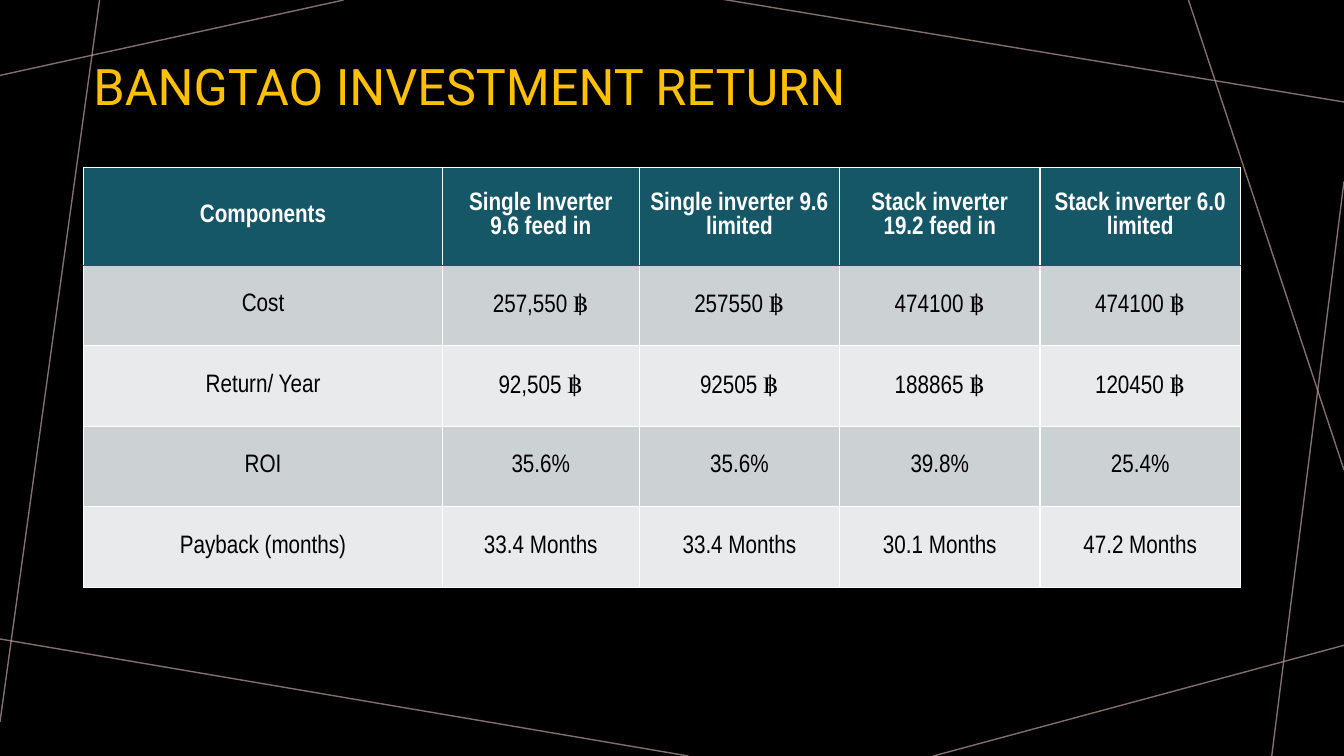
from lxml import etree
from pptx import Presentation
from pptx.dml.color import RGBColor
from pptx.enum import shapes, text
from pptx.oxml import ns
from pptx.util import Cm, Pt

# Content
TITLE = "BANGTAO INVESTMENT RETURN"
ROWS = [
    ("Components", "Single Inverter 9.6 feed in", "Single inverter 9.6 limited",
     "Stack inverter 19.2 feed in", "Stack inverter 6.0 limited"),
    ("Cost", "257,550 ฿", "257550 ฿", "474100 ฿", "474100 ฿"),
    ("Return/ Year", "92,505 ฿", "92505 ฿", "188865 ฿", "120450 ฿"),
    ("ROI", "35.6%", "35.6%", "39.8%", "25.4%"),
    ("Payback (months)", "33.4 Months", "33.4 Months", "30.1 Months", "47.2 Months"),
]

# Measures in cm
WIDTH, HEIGHT = 33.87, 19.05
COLUMNS = [9.04, 4.96, 5.05, 5.05, 5.05]
HEADER_HEIGHT, ROW_HEIGHT = 2.46, 2.03
TABLE_LEFT, TABLE_TOP = 2.11, 4.22
LINES = [
    (8.66, 0, 0, 1.9), (2.51, 0, 0, 18.19), (17.35, HEIGHT, -0.13, 16.08),
    (WIDTH, 16.26, 23.52, HEIGHT), (WIDTH, 4.57, 32.05, HEIGHT),
    (WIDTH, 11.84, 29.95, 0), (WIDTH, 2.57, 18.14, -0.03),
]

BLACK = RGBColor(0x00, 0x00, 0x00)
WHITE = RGBColor(0xFF, 0xFF, 0xFF)
GOLD = RGBColor(0xFF, 0xC0, 0x00)
ROSE = RGBColor(0xBA, 0x9C, 0xA0)
TEAL = RGBColor(0x15, 0x57, 0x67)
BANDS = [RGBColor(0xE8, 0xEA, 0xEB), RGBColor(0xCC, 0xD1, 0xD3)]


def write(tf, words, color, align, **fmt):
    p = tf.paragraphs[0]
    p.alignment = align
    r = p.add_run()
    r.text = words
    for name, value in fmt.items():
        setattr(r.font, name, value)
    r.font.color.rgb = color
    return p


def sub(parent, tag, **attrs):
    return etree.SubElement(parent, ns.qn(tag), **attrs)


def border(cell, side, color, width):
    ln = sub(cell._tc.get_or_add_tcPr(), "a:" + side, w=str(Pt(width)))
    sub(sub(ln, "a:solidFill"), "a:srgbClr", val=str(color))


prs = Presentation()
prs.slide_width, prs.slide_height = Cm(WIDTH), Cm(HEIGHT)
s = prs.slides.add_slide(prs.slide_layouts[5])
s.background.fill.solid()
s.background.fill.fore_color.rgb = BLACK

# Crossing background lines
for ends in LINES:
    line = s.shapes.add_connector(shapes.MSO_CONNECTOR.STRAIGHT, *map(Cm, ends))
    line.line.color.rgb = ROSE
    line.line.width = Pt(1)
    sub(line.line._ln.find(".//" + ns.qn("a:srgbClr")), "a:alpha", val="70000")
    sub(line._element.spPr, "a:effectLst")

# Title
title = s.shapes.title
title.left, title.top, title.width, title.height = map(Cm, (2.1, 0.32, 27.51, 3.84))
title.text_frame.vertical_anchor = text.MSO_ANCHOR.MIDDLE
p = write(title.text_frame, TITLE, GOLD, text.PP_ALIGN.LEFT, size=Pt(36), name="Roboto")
p.line_spacing = 0.9

# Investment table
table = s.shapes.add_table(
    len(ROWS), len(COLUMNS), Cm(TABLE_LEFT), Cm(TABLE_TOP), Cm(sum(COLUMNS)),
    Cm(HEADER_HEIGHT + ROW_HEIGHT * (len(ROWS) - 1))).table
for column, width in zip(table.columns, COLUMNS):
    column.width = Cm(width)
for i, row in enumerate(ROWS):
    header = i == 0
    table.rows[i].height = Cm(HEADER_HEIGHT if header else ROW_HEIGHT)
    for j, words in enumerate(row):
        cell = table.cell(i, j)
        cell.vertical_anchor = text.MSO_ANCHOR.MIDDLE
        write(cell.text_frame, words, WHITE if header else BLACK, text.PP_ALIGN.CENTER,
              size=Pt(18), name="Arial Narrow", bold=header)
        for side in ("lnL", "lnR", "lnT", "lnB"):
            under_header = (i, side) in ((0, "lnB"), (1, "lnT"))
            border(cell, side, *((TEAL, 0.75) if under_header else (WHITE, 1)))
        cell.fill.solid()
        cell.fill.fore_color.rgb = TEAL if header else BANDS[i % 2]

prs.save("out.pptx")
